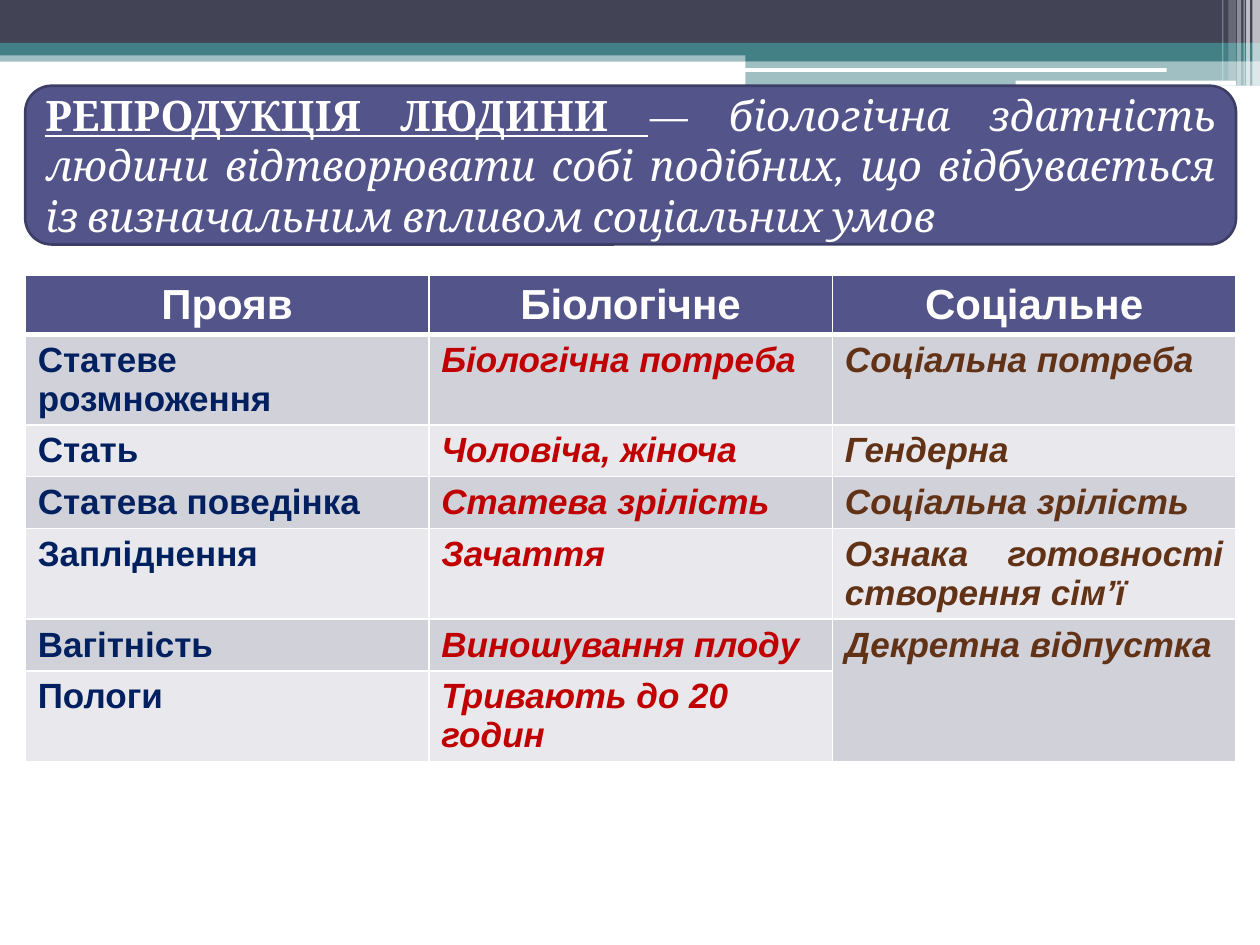
from typing import NamedTuple, Optional

from lxml.etree import SubElement
from pptx import Presentation
from pptx.dml.color import RGBColor
from pptx.enum.shapes import MSO_SHAPE as Shape
from pptx.enum.text import MSO_ANCHOR as Anchor, PP_ALIGN as Align
from pptx.oxml.ns import qn
from pptx.util import Pt

WHITE, SLATE, TEAL, INDIGO = "FFFFFF", "424456", "438086", "53548A"
NAVY, RED, BROWN = "002060", "C00000", "623217"
ROW_FILLS = ("D1D1DA", "E9E9ED")
MARGIN, CONTENT_WIDTH = 14.4, 691.9


class Band(NamedTuple):
    left: float
    top: float
    width: float
    height: float
    color: str
    opacity: int = 100
    rounded: bool = False


class Column(NamedTuple):
    heading: str
    color: str
    italic: bool
    entries: tuple


BANDS = (
    Band(0, 28.8, 720, 6.5, TEAL, 50),
    Band(0, 0, 720, 24.5, SLATE),
    Band(0, 24.5, 720, 7.2, TEAL),
    Band(426, 28, 294, 7, TEAL),
    Band(426, 34.9, 294, 14.1, TEAL, 50),
    Band(425.5, 38.9, 241.2, 2.2, WHITE, rounded=True),
    Band(580.3, 46.1, 126, 2.9, WHITE, rounded=True),
    # Vertical stripes in the corner
    Band(715.7, 0, 4.3, 49, WHITE, 65),
    Band(712.1, 0, 2.2, 49, WHITE, 65),
    Band(710.6, 0, 0.7, 49, WHITE, 60),
    Band(707, 0, 2.2, 49, WHITE, 40),
    Band(702, 0, 4.3, 46.1, WHITE, 20),
    Band(698.4, 0, 0.7, 46.1, WHITE, 30),
)

COLUMNS = (
    Column("Прояв", NAVY, False,
           ("Статеве розмноження", "Стать", "Статева поведінка",
            "Запліднення", "Вагітність", "Пологи")),
    Column("Біологічне", RED, True,
           ("Біологічна потреба", "Чоловіча, жіноча", "Статева зрілість",
            "Зачаття", "Виношування плоду", "Тривають до 20 годин")),
    Column("Соціальне", BROWN, True,
           ("Соціальна потреба", "Гендерна", "Соціальна зрілість",
            "Ознака готовності створення сім’ї", "Декретна відпустка")),
)


def rgb(color: str) -> RGBColor:
    return RGBColor.from_string(color)


def add_text(paragraph, text: str, *, size: float, font: str, color: str = WHITE,
             bold: bool = False, italic: bool = False, underline: bool = False,
             align: Optional[Align] = None) -> None:
    if align is not None:
        paragraph.alignment = align
    run = paragraph.add_run()
    run.text = text
    style = run.font
    style.size, style.name = Pt(size), font
    style.bold, style.italic, style.underline = bold, italic, underline
    style.color.rgb = rgb(color)


def add_box(slide, left: float, top: float, width: float, height: float,
            color: str, rounded: bool = False):
    kind = Shape.ROUNDED_RECTANGLE if rounded else Shape.RECTANGLE
    box = slide.shapes.add_shape(kind, Pt(left), Pt(top), Pt(width), Pt(height))
    box.shadow.inherit = False
    box.fill.solid()
    box.fill.fore_color.rgb = rgb(color)
    box.line.fill.background()
    return box


def draw_band(slide, band: Band) -> None:
    box = add_box(slide, band.left, band.top, band.width, band.height,
                  band.color, band.rounded)
    if band.opacity < 100:
        fill_color = box._element.spPr.find(qn("a:solidFill"))[0]
        SubElement(fill_color, qn("a:alpha"), val=str(band.opacity * 1000))


def style_cell(cell, fill: str, top: float, bottom: float) -> None:
    """Draw white borders, then the fill, in the order the format requires."""
    properties = cell._tc.get_or_add_tcPr()
    for side, width in (("L", 1), ("R", 1), ("T", top), ("B", bottom)):
        border = SubElement(properties, qn(f"a:ln{side}"), w=str(Pt(width)))
        SubElement(SubElement(border, qn("a:solidFill")), qn("a:srgbClr"), val=WHITE)
    cell.fill.solid()
    cell.fill.fore_color.rgb = rgb(fill)


def draw_table(slide) -> None:
    row_count, row_height = 7, 29.5
    table = slide.shapes.add_table(
        row_count, len(COLUMNS), Pt(MARGIN), Pt(157), Pt(CONTENT_WIDTH),
        Pt(row_count * row_height)).table
    for row in table.rows:
        row.height = Pt(row_height)
    for index, column in enumerate(COLUMNS):
        table.columns[index].width = Pt(CONTENT_WIDTH / len(COLUMNS))
        for row in range(row_count):
            style_cell(table.cell(row, index),
                       ROW_FILLS[(row - 1) % 2] if row else INDIGO,
                       top=3 if row == 1 else 1, bottom=1 if row else 3)
        add_text(table.cell(0, index).text_frame.paragraphs[0], column.heading,
                 size=24, font="Arial", bold=True, align=Align.CENTER)
        for row, entry in enumerate(column.entries, start=1):
            add_text(table.cell(row, index).text_frame.paragraphs[0], entry,
                     size=20, font="Arial", color=column.color, bold=True,
                     italic=column.italic,
                     align=Align.LEFT if entry.startswith("Тривають") else Align.JUSTIFY)
    # Maternity leave covers both pregnancy and birth
    table.cell(5, 2).merge(table.cell(6, 2))


def draw_definition(slide) -> None:
    definition = add_box(slide, MARGIN, 49, CONTENT_WIDTH, 90.7, INDIGO, rounded=True)
    definition.line.color.rgb = rgb("3D3E66")
    definition.line.width = Pt(1.5)
    frame = definition.text_frame
    frame.word_wrap = True
    frame.vertical_anchor = Anchor.MIDDLE
    sentence = frame.paragraphs[0]
    sentence.alignment = Align.JUSTIFY
    add_text(sentence, "РЕПРОДУКЦІЯ ЛЮДИНИ ", size=24, font="Cambria",
             bold=True, underline=True)
    add_text(sentence, "— ", size=24, font="Cambria")
    add_text(sentence, "біологічна здатність людини відтворювати собі подібних, "
             "що відбувається із визначальним впливом соціальних умов",
             size=24, font="Cambria", italic=True)


def main() -> None:
    deck = Presentation()
    deck.slide_width, deck.slide_height = Pt(720), Pt(540)
    slide = deck.slides.add_slide(deck.slide_layouts[6])
    for band in BANDS:
        draw_band(slide, band)
    draw_table(slide)
    draw_definition(slide)
    deck.save("out.pptx")


if __name__ == "__main__":
    main()
